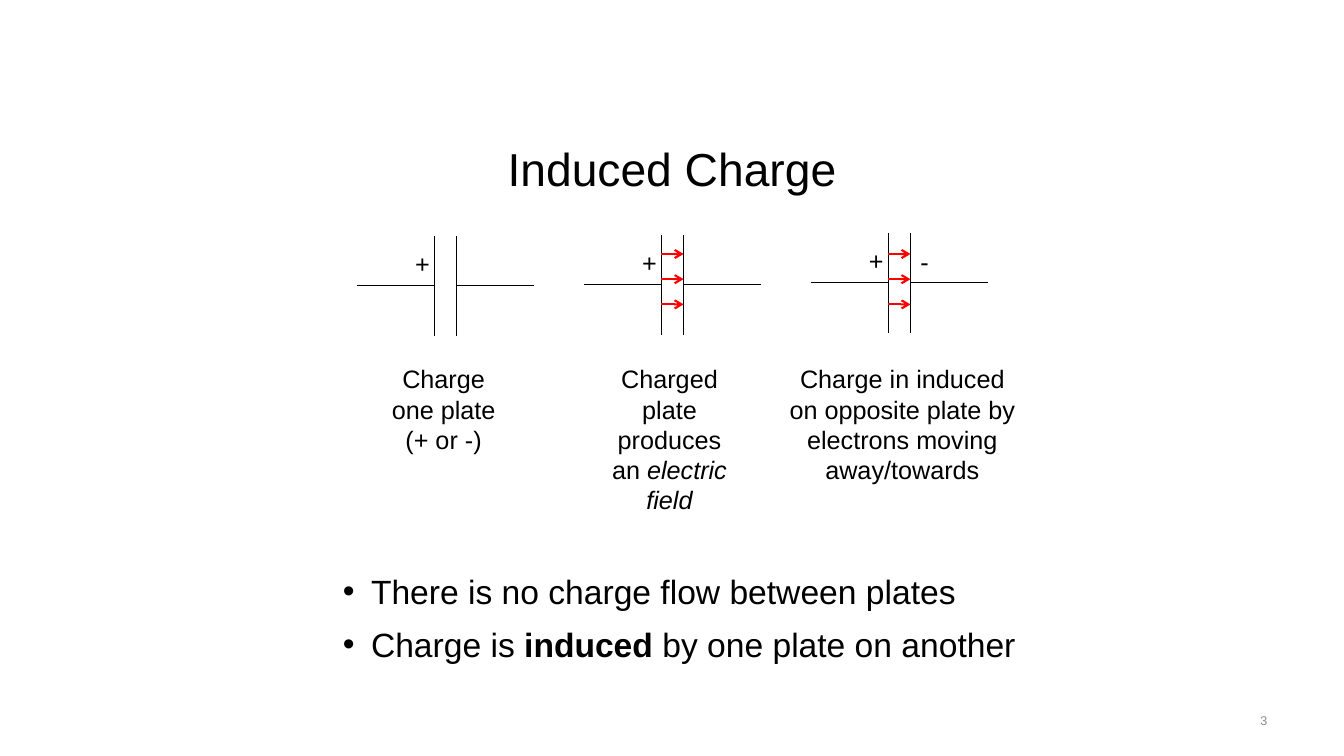
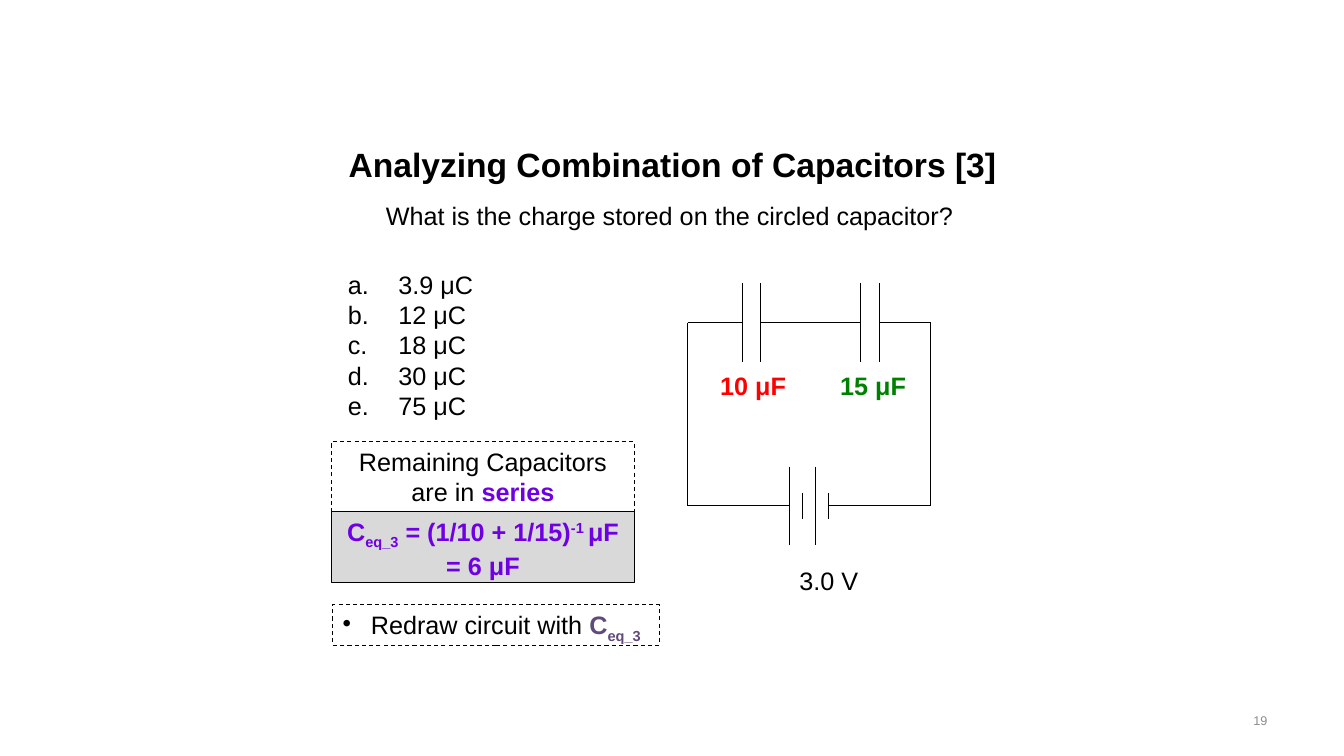
"""Build two slides on capacitors: induced charge and a series combination."""
from dataclasses import dataclass
from typing import NamedTuple, Optional, Sequence

from lxml import etree
from pptx import Presentation
from pptx import slide as sld
from pptx import util as u
from pptx.dml import color
from pptx.enum import dml, shapes, text
from pptx.oxml import ns
from pptx.shapes import autoshape, shapetree

EMU_PER_PX = 9144


@dataclass(frozen=True)
class Theme:
    """Colours, font and type sizes of the deck."""
    font: str = "Arial"
    ink: str = "000000"
    grey: str = "8C8C8C"
    panel: str = "D9D9D9"
    red: str = "FF0000"
    green: str = "008000"
    violet: str = "6F00E3"
    plum: str = "604A7B"
    title: int = 33
    heading: int = 24
    body: int = 18
    footer: int = 9
    thin: float = 0.75
    thick: float = 1.5


THEME = Theme()
ALIGN = text.PP_ALIGN


class Box(NamedTuple):
    """A rectangle in px."""
    left: int
    top: int
    width: int
    height: int


class Wire(NamedTuple):
    """A straight line in px."""
    x1: int
    y1: int
    x2: int
    y2: int


class Run(NamedTuple):
    """A piece of text with one format."""
    text: str
    color: str = THEME.ink
    bold: bool = False
    italic: bool = False
    baseline: int = 0


class Bullet(NamedTuple):
    """A list marker and its hanging indent in px."""
    tag: str
    attribute: str
    value: str
    indent: int


class Stage(NamedTuple):
    """One step of charging a capacitor."""
    left: int
    top: int
    caption_box: Box
    caption: list[Run]
    arrows: bool = False
    minus: bool = False


class Panel(NamedTuple):
    """A framed remark."""
    box: Box
    runs: list[Run]
    fill: Optional[str] = None
    align: ALIGN = ALIGN.CENTER
    bullet: Optional[Bullet] = None


DOT = Bullet("a:buChar", "char", "•", 28)
LETTER = Bullet("a:buAutoNum", "type", "alphaLcPeriod", 50)

STAGES = [
    Stage(354, 234, Box(368, 356, 144, 101), [Run("Charge one plate (+ or -)")]),
    Stage(579, 233, Box(592, 356, 144, 162),
          [Run("Charged plate produces an "), Run("electric field", italic=True)], arrows=True),
    Stage(804, 231, Box(773, 356, 244, 131),
          [Run("Charge in induced on opposite plate by electrons moving away/towards")],
          arrows=True, minus=True),
]

PANELS = [
    Panel(Box(329, 438, 300, 71),
          [Run("Remaining Capacitors are in "), Run("series", THEME.violet, True)]),
    Panel(Box(329, 507, 300, 71),
          [Run("C", THEME.violet, True), Run("eq_3", THEME.violet, True, baseline=-25),
           Run(" = (1/10 + 1/15)", THEME.violet, True),
           Run("-1 ", THEME.violet, True, baseline=30),
           Run("μF = 6 μF", THEME.violet, True)], THEME.panel),
    Panel(Box(330, 600, 324, 40),
          [Run("Redraw circuit with "), Run("C", THEME.plum, True),
           Run("eq_3", THEME.plum, True, baseline=-25)], align=ALIGN.LEFT, bullet=DOT),
]


def px(length: int) -> u.Emu:
    """Turn px into EMU."""
    return u.Emu(length * EMU_PER_PX)


def write(shape: autoshape.Shape, paragraphs: Sequence[Sequence[Run]], size: int = THEME.body,
          align: ALIGN = ALIGN.LEFT, anchor: text.MSO_ANCHOR = text.MSO_ANCHOR.TOP,
          bullet: Optional[Bullet] = None, before: int = 0) -> None:
    """Fill a shape with formatted paragraphs."""
    frame = shape.text_frame
    frame.text = "\n".join(runs[0].text for runs in paragraphs)
    frame.word_wrap = True
    frame.auto_size = text.MSO_AUTO_SIZE.NONE
    frame.vertical_anchor = anchor
    for paragraph, runs in zip(frame.paragraphs, paragraphs):
        paragraph.alignment = align
        paragraph.space_before = u.Pt(before)
        for extra in runs[1:]:
            paragraph.add_run().text = extra.text
        for run, style in zip(paragraph.runs, runs):
            run.font.name = THEME.font
            run.font.size = u.Pt(size)
            run.font.bold = style.bold
            run.font.italic = style.italic
            run.font.color.rgb = color.RGBColor.from_string(style.color)
            if style.baseline:
                run._r.get_or_add_rPr().set("baseline", str(style.baseline * 1000))
        if bullet:
            properties = paragraph._p.get_or_add_pPr()
            properties.set("marL", str(px(bullet.indent)))
            properties.set("indent", str(px(-bullet.indent)))
            marker = etree.SubElement(properties, ns.qn(bullet.tag))
            marker.set(bullet.attribute, bullet.value)


def place(shape: autoshape.Shape, box: Box) -> autoshape.Shape:
    """Move a placeholder to a box."""
    shape.left, shape.top, shape.width, shape.height = map(px, box)
    return shape


def add_label(parts: shapetree.GroupShapes, box: Box, runs: Sequence[Run],
              align: ALIGN = ALIGN.CENTER) -> None:
    """Add a text box with one paragraph."""
    write(parts.add_textbox(*map(px, box)), [runs], align=align)


def add_wire(parts: shapetree.GroupShapes, wire: Wire, ink: str = THEME.ink,
             width: float = THEME.thin, arrow: bool = False) -> None:
    """Draw a straight line, with an arrowhead if asked."""
    connector = parts.add_connector(shapes.MSO_CONNECTOR.STRAIGHT, *map(px, wire))
    connector.line.color.rgb = color.RGBColor.from_string(ink)
    connector.line.width = u.Pt(width)
    if arrow:
        etree.SubElement(connector.line._get_or_add_ln(), ns.qn("a:tailEnd")).set("type", "arrow")
    etree.SubElement(connector._element.spPr, ns.qn("a:effectLst"))


def add_panel(slide: sld.Slide, panel: Panel) -> None:
    """Draw a framed remark, dashed unless filled."""
    shape = slide.shapes.add_shape(shapes.MSO_SHAPE.RECTANGLE, *map(px, panel.box))
    shape.shadow.inherit = False
    shape.line.color.rgb = color.RGBColor.from_string(THEME.ink)
    shape.line.width = u.Pt(THEME.thin)
    if panel.fill:
        shape.fill.solid()
        shape.fill.fore_color.rgb = color.RGBColor.from_string(panel.fill)
    else:
        shape.fill.background()
        shape.line.dash_style = dml.MSO_LINE.DASH
    write(shape, [panel.runs], align=panel.align, bullet=panel.bullet)


def add_slide(presentation: Presentation, title: Run, size: int, box: Box,
              number: int) -> sld.Slide:
    """Add a slide with its title and page number."""
    slide = presentation.slides.add_slide(presentation.slide_layouts[1])
    write(place(slide.shapes.title, box), [[title]], size, ALIGN.CENTER, text.MSO_ANCHOR.MIDDLE)
    footer = slide.shapes.add_textbox(*map(px, Box(956, 695, 311, 40)))
    write(footer, [[Run(str(number), THEME.grey)]], THEME.footer, ALIGN.RIGHT,
          text.MSO_ANCHOR.MIDDLE)
    return slide


def add_stage(slide: sld.Slide, stage: Stage) -> None:
    """Draw a capacitor with its charges, field and caption."""
    parts = slide.shapes.add_group_shape().shapes
    lead, gap, height = 77, 22, 99
    near = stage.left + lead
    far = near + gap
    middle = stage.top + height // 2
    for plate in (near, far):
        add_wire(parts, Wire(plate, stage.top, plate, stage.top + height))
    for start in (stage.left, far):
        add_wire(parts, Wire(start, middle, start + lead, middle))
    add_label(parts, Box(near - 29, stage.top + 7, 26, 40), [Run("+")], ALIGN.LEFT)
    if stage.minus:
        add_label(parts, Box(far, stage.top + 8, 26, 40), [Run("-")], ALIGN.LEFT)
    if stage.arrows:
        for level in range(252, 303, 25):
            add_wire(parts, Wire(near, level, far, level), THEME.red, THEME.thick, True)
    add_label(parts, stage.caption_box, stage.caption)


def add_circuit(slide: sld.Slide) -> None:
    """Draw two capacitors in series with a battery."""
    parts = slide.shapes.add_group_shape().shapes
    left, right, top, bottom = 682, 923, 320, 502
    long_half, short_half = 39, 13
    plates = [736, 754, 853, 872]
    cells = [783, 796, 809, 822]
    ends = [left, *plates, right]
    wires = [Wire(a, top, b, top) for a, b in zip(ends[::2], ends[1::2])]
    wires += [Wire(x, top - long_half, x, top + long_half) for x in plates]
    for x, half in zip(cells, (long_half, short_half) * 2):
        wires.append(Wire(x, bottom - half, x, bottom + half))
    wires += [Wire(left, bottom, cells[0], bottom), Wire(cells[-1], bottom, right, bottom)]
    wires += [Wire(x, top, x, bottom) for x in (left, right)]
    for wire in wires:
        add_wire(parts, wire)
    for x, y, run in ((775, 556, Run("3.0 V")),
                      (700, 362, Run("10 μF", THEME.red, True)),
                      (819, 362, Run("15 μF", THEME.green, True))):
        add_label(parts, Box(x, y, 94, 40), [run])


def build_induced_charge(presentation: Presentation) -> None:
    """Build the slide on induced charge."""
    slide = add_slide(presentation, Run("Induced Charge"), THEME.title,
                      Box(329, 116, 675, 102), 3)
    points = [[Run("There is no charge flow between plates")],
              [Run("Charge is "), Run("induced ", bold=True), Run("by one plate on another")]]
    write(place(slide.placeholders[1], Box(330, 561, 738, 102)), points, THEME.heading,
          bullet=DOT, before=9)
    for stage in STAGES:
        add_stage(slide, stage)


def build_combination(presentation: Presentation) -> None:
    """Build the slide on the series combination."""
    slide = add_slide(presentation, Run("Analyzing Combination of Capacitors [3]", bold=True),
                      THEME.heading, Box(323, 116, 688, 94), 19)
    answers = [[Run(f"{charge} μC")] for charge in ("3.9", "12", "18", "30", "75")]
    write(place(slide.placeholders[1], Box(335, 262, 250, 162)), answers, bullet=LETTER)
    add_label(slide.shapes, Box(317, 194, 694, 40),
              [Run("What is the charge stored on the circled capacitor?")])
    add_circuit(slide)
    for panel in PANELS:
        add_panel(slide, panel)


def main() -> None:
    """Build and save the presentation."""
    presentation = Presentation()
    presentation.slide_width, presentation.slide_height = px(1333), px(750)
    build_induced_charge(presentation)
    build_combination(presentation)
    presentation.save("out.pptx")


if __name__ == "__main__":
    main()
